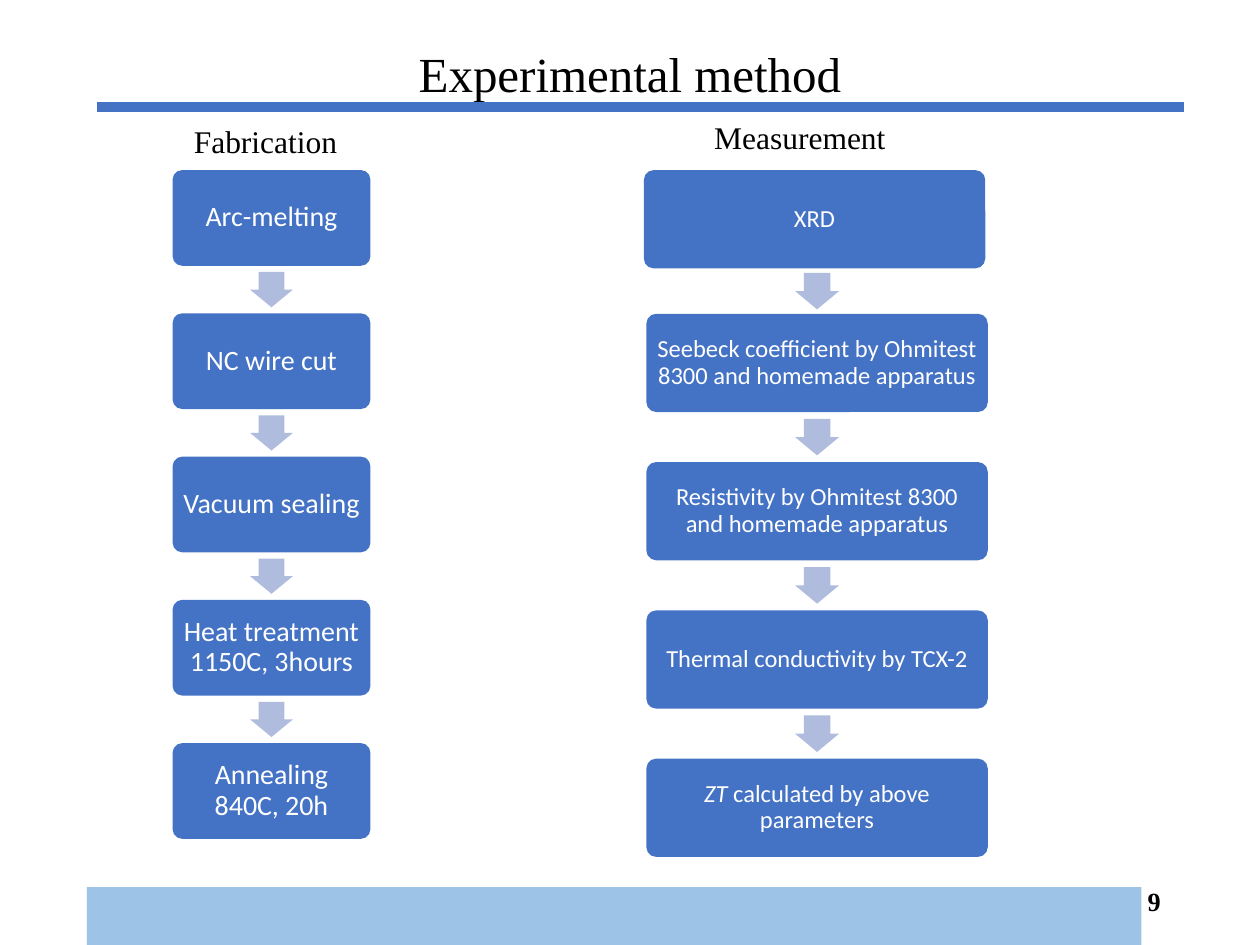
from pptx import Presentation
from pptx.dml.color import RGBColor
from pptx.enum.shapes import MSO_CONNECTOR, MSO_SHAPE
from pptx.enum.text import MSO_ANCHOR, PP_ALIGN
from pptx.oxml.ns import qn
from pptx.util import Inches, Pt
from lxml.etree import SubElement

# Content: each step is a list of (text, italic) runs
TITLE = "Experimental method"
PAGE_NUMBER = "9"
FLOWS = [
    {
        "heading": "Fabrication", "heading_at": (1.44, 0.92, 1.44, 0.4),
        "size": 16, "box": (1.57, 0.76), "arrow": (0.34, 0.28),
        "lefts": [1.37] * 5,
        "tops": [1.35 + 1.137 * row for row in range(5)],
        "steps": [
            [("Arc-melting", False)],
            [("NC wire cut", False)],
            [("Vacuum sealing", False)],
            [("Heat treatment 1150C, 3hours", False)],
            [("Annealing 840C, 20h", False)],
        ],
    },
    {
        "heading": "Measurement", "heading_at": (5.57, 0.89, 1.82, 0.4),
        "size": 14, "box": (2.71, 0.78), "arrow": (0.35, 0.29),
        "lefts": [5.11] + [5.13] * 4,
        "tops": [1.35] + [2.49 + 1.177 * row for row in range(4)],
        "steps": [
            [("XRD", False)],
            [("Seebeck coefficient by Ohmitest 8300 and homemade apparatus", False)],
            [("Resistivity by Ohmitest 8300 and homemade apparatus", False)],
            [("Thermal conductivity by TCX-2", False)],
            [("ZT ", True), ("calculated by above parameters", False)],
        ],
    },
]
SERIF, SANS = "Times New Roman", "Calibri"
BLUE, PALE, FOOTER = "4472C4", "B0BCDE", "9DC3E6"
BLACK, WHITE = "000000", "FFFFFF"


def color(value):
    return RGBColor.from_string(value)


def write(shape, runs, size, font, ink, align, anchor=MSO_ANCHOR.MIDDLE,
          bold=False, spacing=None, inset=None):
    frame = shape.text_frame
    frame.word_wrap = True
    frame.vertical_anchor = anchor
    if inset is not None:
        frame.margin_left = frame.margin_right = Inches(inset)
        frame.margin_top = frame.margin_bottom = Inches(inset)
    para = frame.paragraphs[0]
    para.alignment = align
    para.line_spacing = spacing
    for text, italic in runs:
        span = para.add_run()
        span.text = text
        span.font.size = Pt(size)
        span.font.name = font
        span.font.bold = bold
        span.font.italic = italic
        span.font.color.rgb = color(ink)


def add_block(page, kind, place, fill):
    block = page.shapes.add_shape(kind, *map(Inches, place))
    block.shadow.inherit = False
    block.fill.solid()
    block.fill.fore_color.rgb = color(fill)
    block.line.fill.background()
    return block


def add_text(page, place, text, size, **style):
    box = page.shapes.add_textbox(*map(Inches, place))
    write(box, [(text, False)], size, SERIF, BLACK, **style)


def add_flow(page, flow):
    width, height = flow["box"]
    arrow_width, arrow_height = flow["arrow"]
    bottom = None
    for left, top, runs in zip(flow["lefts"], flow["tops"], flow["steps"]):
        # Arrow centred in the gap above every step but the first
        if bottom is not None:
            place = (left + (width - arrow_width) / 2,
                     (bottom + top - arrow_height) / 2, arrow_width, arrow_height)
            arrow = add_block(page, MSO_SHAPE.DOWN_ARROW, place, PALE)
            arrow.adjustments[0] = 0.6
            arrow.adjustments[1] = 0.5
        step = add_block(page, MSO_SHAPE.ROUNDED_RECTANGLE,
                         (left, top, width, height), BLUE)
        step.adjustments[0] = 0.1
        write(step, runs, flow["size"], SANS, WHITE, PP_ALIGN.CENTER,
              spacing=0.9, inset=0.05)
        bottom = top + height
    add_text(page, flow["heading_at"], flow["heading"], 18,
             align=PP_ALIGN.LEFT, anchor=MSO_ANCHOR.TOP)


def main():
    deck = Presentation()
    deck.slide_width, deck.slide_height = Inches(10), Inches(7.5)
    page = deck.slides.add_slide(deck.slide_layouts[5])

    # Title and rule
    title = page.shapes.title
    title.left, title.top = Inches(0.69), Inches(0.18)
    title.width, title.height = Inches(8.62), Inches(0.85)
    write(title, [(TITLE, False)], 28, SERIF, BLACK, PP_ALIGN.CENTER, spacing=0.9)
    rule = page.shapes.add_connector(MSO_CONNECTOR.STRAIGHT, Inches(0.77),
                                     Inches(0.85), Inches(9.4), Inches(0.85))
    rule.line.color.rgb = color(BLUE)
    rule.line.width = Pt(6)
    SubElement(rule._element.spPr, qn("a:effectLst"))

    # Footer
    add_text(page, (7.06, 6.95, 2.25, 0.4), PAGE_NUMBER, 15,
             align=PP_ALIGN.RIGHT, bold=True)
    add_block(page, MSO_SHAPE.RECTANGLE, (0.69, 7.04, 8.37, 0.48), FOOTER)

    # Process columns
    for flow in FLOWS:
        add_flow(page, flow)

    deck.save("out.pptx")


if __name__ == "__main__":
    main()
